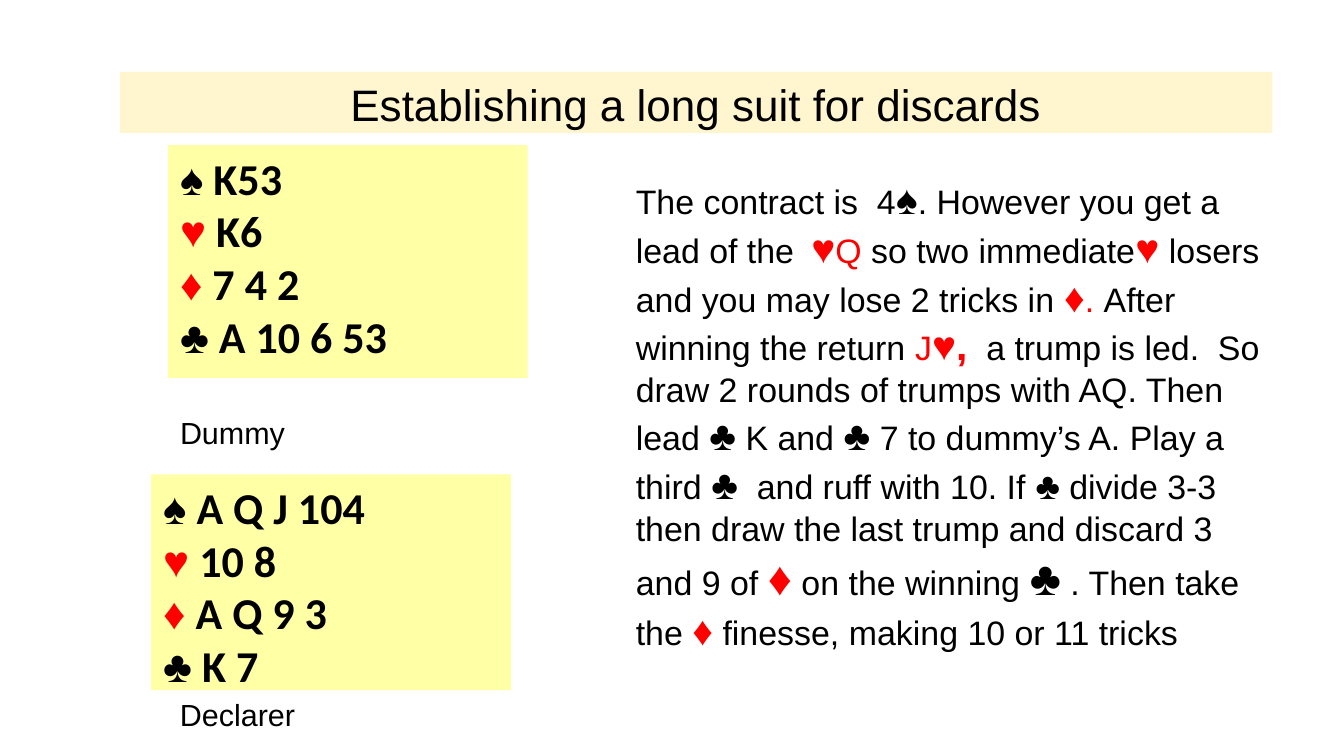
from pptx import Presentation
from pptx.dml.color import RGBColor
from pptx.enum.shapes import MSO_SHAPE
from pptx.enum.text import MSO_ANCHOR, PP_ALIGN
from pptx.util import Inches, Pt

WIDTH, HEIGHT = 11.02, 6.2
BLACK, RED = "000000", "FF0000"
CREAM, YELLOW = "FFF5CE", "FFFFA6"
SUITS = (("♠", BLACK), ("♥", RED), ("♦", RED), ("♣", BLACK))
PIP_COLORS = dict(SUITS)

DUMMY = ("K53", "K6", "7 4 2", "A 10 6 53")
DECLARER = ("A Q J 104", "10 8", "A Q 9 3", "K 7")

STORY = (
    ("The contract is  4",), ("♠", 24, BLACK, False),
    (". However you get a lead of the ",), (" ", 16), ("♥", 24),
    ("Q ", 20, RED), ("so two immediate",), ("♥", 24),
    (" losers and you may lose 2 tricks in ",), ("♦", 24), (". ", 20, RED),
    ("After winning the return",), (" J", 20, RED), ("♥,", 24),
    ("  a trump is led.  So draw 2 rounds of trumps with AQ. Then lead ",),
    ("♣", 24), (" K and ",), ("♣", 24),
    (" 7 to dummy’s A. Play a third ",), ("♣", 24),
    ("  and ruff with 10. If ",), ("♣", 22),
    (" divide 3-3 then draw the last trump and discard 3 and 9 of ",),
    ("♦", 28), (" on the winning ",), ("♣", 28), (" . Then take the ",),
    ("♦", 24), (" finesse, making 10 or 11 tricks",),
)


def rgb(color):
    """Turn a hex string into a colour."""
    return RGBColor.from_string(color)


def area(left, top, width, height):
    """Turn percentages of the slide into lengths."""
    return (Inches(left * WIDTH / 100), Inches(top * HEIGHT / 100),
            Inches(width * WIDTH / 100), Inches(height * HEIGHT / 100))


def add_run(p, text, size=20, color=BLACK, bold=False, font="Arial"):
    """Add one formatted run to a paragraph."""
    r = p.add_run()
    r.text = text
    r.font.size = Pt(size)
    r.font.name = font
    r.font.bold = bold
    r.font.color.rgb = rgb(color)


def prepare(sp):
    """Make the text wrap from the top and return its frame."""
    tf = sp.text_frame
    tf.word_wrap = True
    tf.vertical_anchor = MSO_ANCHOR.TOP
    return tf


def add_panel(s, box, fill):
    """Add a plain filled rectangle and return its text frame."""
    sp = s.shapes.add_shape(MSO_SHAPE.RECTANGLE, *area(*box))
    sp.shadow.inherit = False
    sp.fill.solid()
    sp.fill.fore_color.rgb = rgb(fill)
    sp.line.fill.background()
    return prepare(sp)


def add_title(s, box, text):
    """Add the centred title band."""
    p = add_panel(s, box, CREAM).paragraphs[0]
    p.alignment = PP_ALIGN.CENTER
    add_run(p, text, 26)


def add_hand(s, box, holdings):
    """Add a hand with one suit on each line."""
    tf = add_panel(s, box, YELLOW)
    for i, ((pip, color), cards) in enumerate(zip(SUITS, holdings)):
        p = tf.add_paragraph() if i else tf.paragraphs[0]
        p.alignment = PP_ALIGN.LEFT
        add_run(p, pip, 26, color, i > 0)
        add_run(p, " " + cards, 26, BLACK, True, "Calibri")


def add_text(s, box, runs):
    """Add a text box, with suit symbols bold in their suit colour."""
    p = prepare(s.shapes.add_textbox(*area(*box))).paragraphs[0]
    for run in runs:
        pip_color = PIP_COLORS.get(run[0][0])
        if pip_color and len(run) == 2:
            add_run(p, *run, pip_color, True)
        else:
            add_run(p, *run)


def main():
    """Build the bridge lesson slide."""
    prs = Presentation()
    prs.slide_width, prs.slide_height = Inches(WIDTH), Inches(HEIGHT)
    s = prs.slides.add_slide(prs.slide_layouts[6])
    add_title(s, (8.92, 9.52, 85.75, 8.06),
              "Establishing a long suit for discards")
    add_hand(s, (11.25, 62.74, 26.77, 28.55), DECLARER)
    add_hand(s, (12.5, 19.19, 26.77, 30.81), DUMMY)
    add_text(s, (46.42, 22.22, 48.5, 70.32), STORY)
    add_text(s, (12.5, 54.03, 26.77, 6.13), [("Dummy", 18)])
    add_text(s, (12.5, 91.29, 25.05, 6.13), [("Declarer", 18)])
    prs.save("out.pptx")


if __name__ == "__main__":
    main()
